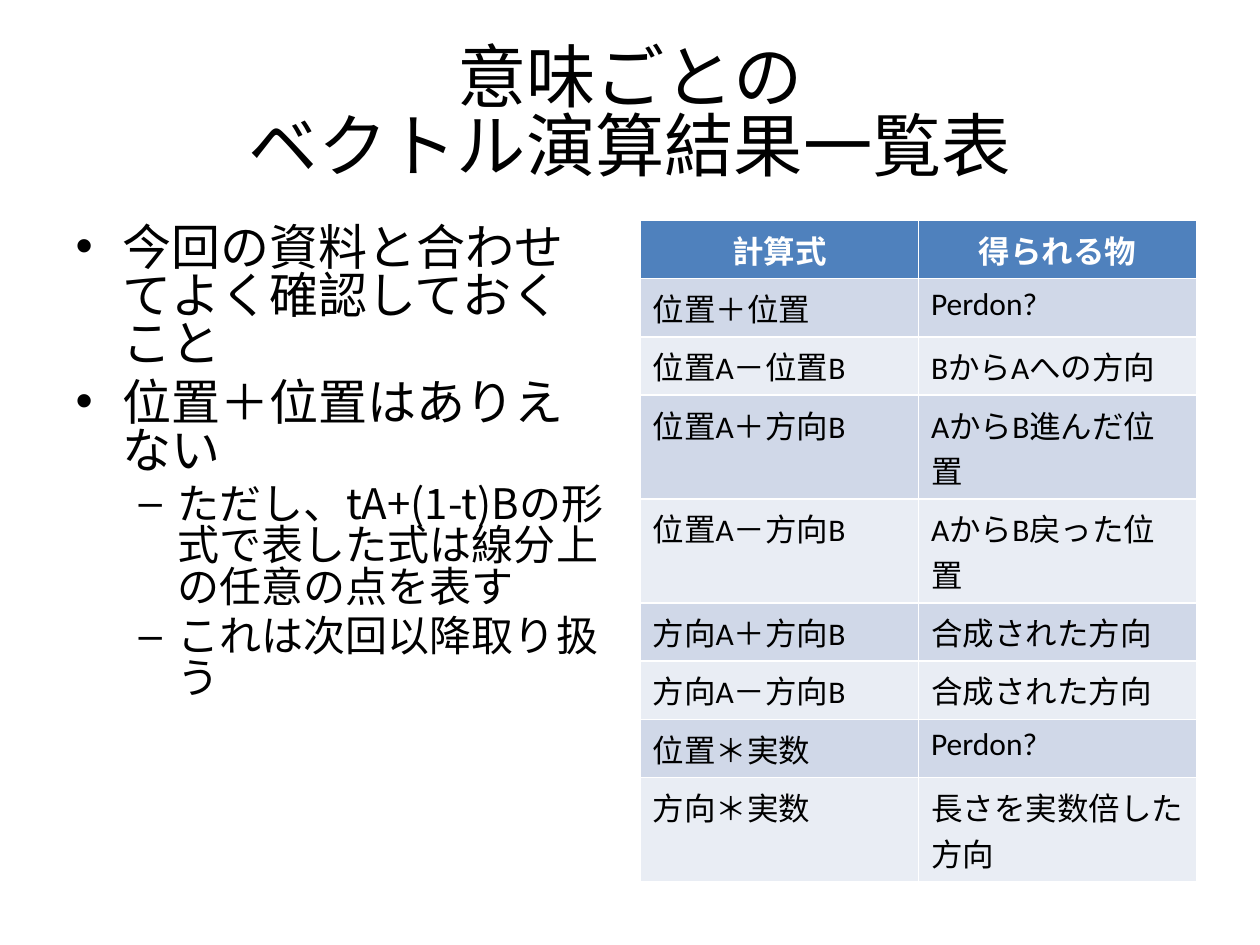
from lxml.etree import SubElement
from pptx import Presentation
from pptx.dml.color import RGBColor
from pptx.enum.text import MSO_ANCHOR, MSO_AUTO_SIZE, PP_ALIGN
from pptx.oxml.ns import qn
from pptx.util import Inches, Pt

COLORS = {
    "text": "000000",
    "header_text": "FFFFFF",
    "header": "4F81BD",
    "odd_row": "D0D8E8",
    "even_row": "E9EDF4",
}
JAPANESE_FONT = "Noto Sans CJK JP"
LATIN_FONT = "Calibri"
TIGHT_LINES = 0.82

TITLE = "意味ごとの\vベクトル演算結果一覧表"
POINTS = [
    (0, "今回の資料と合わせてよく確認しておくこと"),
    (0, "位置＋位置はありえない"),
    (1, "ただし、tA+(1-t)Bの形式で表した式は線分上の任意の点を表す"),
    (1, "これは次回以降取り扱う"),
]
POINT_SIZES = [28, 24]
RESULTS = [
    ("計算式", "得られる物"),
    ("位置＋位置", "Perdon?"),
    ("位置A－位置B", "BからAへの方向"),
    ("位置A＋方向B", "AからB進んだ位置"),
    ("位置A－方向B", "AからB戻った位置"),
    ("方向A＋方向B", "合成された方向"),
    ("方向A－方向B", "合成された方向"),
    ("位置＊実数", "Perdon?"),
    ("方向＊実数", "長さを実数倍した方向"),
]


def write_text(paragraph, text, size, font=JAPANESE_FONT, color="text",
               bold=False, align=None, level=0, line_spacing=None):
    paragraph.text = text
    paragraph.level = level
    paragraph.alignment = align
    paragraph.line_spacing = line_spacing
    for run in paragraph.runs:
        run.font.size = Pt(size)
        run.font.bold = bold
        run.font.color.rgb = RGBColor.from_string(COLORS[color])
        run.font.name = font
        SubElement(run.font._element, qn("a:ea"), typeface=JAPANESE_FONT)


def place(shape, left, top, width, height):
    shape.left, shape.top = Inches(left), Inches(top)
    shape.width, shape.height = Inches(width), Inches(height)
    shape.text_frame.auto_size = MSO_AUTO_SIZE.NONE


def add_title(slide):
    title = slide.shapes.title
    place(title, 0.5, 0.3, 9, 1.25)
    title.text_frame.vertical_anchor = MSO_ANCHOR.MIDDLE
    write_text(title.text_frame.paragraphs[0], TITLE, 39.6,
               align=PP_ALIGN.CENTER, line_spacing=TIGHT_LINES)


def add_points(slide):
    body = slide.placeholders[1]
    place(body, 0.5, 1.75, 4.42, 4.95)
    frame = body.text_frame
    for index, (level, text) in enumerate(POINTS):
        paragraph = frame.add_paragraph() if index else frame.paragraphs[0]
        write_text(paragraph, text, POINT_SIZES[level], level=level,
                   line_spacing=TIGHT_LINES)


def add_results(slide):
    row_count, column_count = len(RESULTS), len(RESULTS[0])
    table = slide.shapes.add_table(
        row_count, column_count, Inches(5.08), Inches(1.75),
        Inches(4.42), Inches(0.41 * row_count)).table
    for row, texts in enumerate(RESULTS):
        header = row == 0
        fill = "header" if header else "odd_row" if row % 2 else "even_row"
        for column, text in enumerate(texts):
            cell = table.cell(row, column)
            cell.fill.solid()
            cell.fill.fore_color.rgb = RGBColor.from_string(COLORS[fill])
            write_text(cell.text_frame.paragraphs[0], text, 18,
                       font=LATIN_FONT, bold=header,
                       color="header_text" if header else "text",
                       align=PP_ALIGN.CENTER if header else None)


def main():
    presentation = Presentation()
    presentation.slide_width = Inches(10)
    presentation.slide_height = Inches(7.5)
    slide = presentation.slides.add_slide(presentation.slide_layouts[1])
    add_title(slide)
    add_points(slide)
    add_results(slide)
    presentation.save("out.pptx")


if __name__ == "__main__":
    main()
